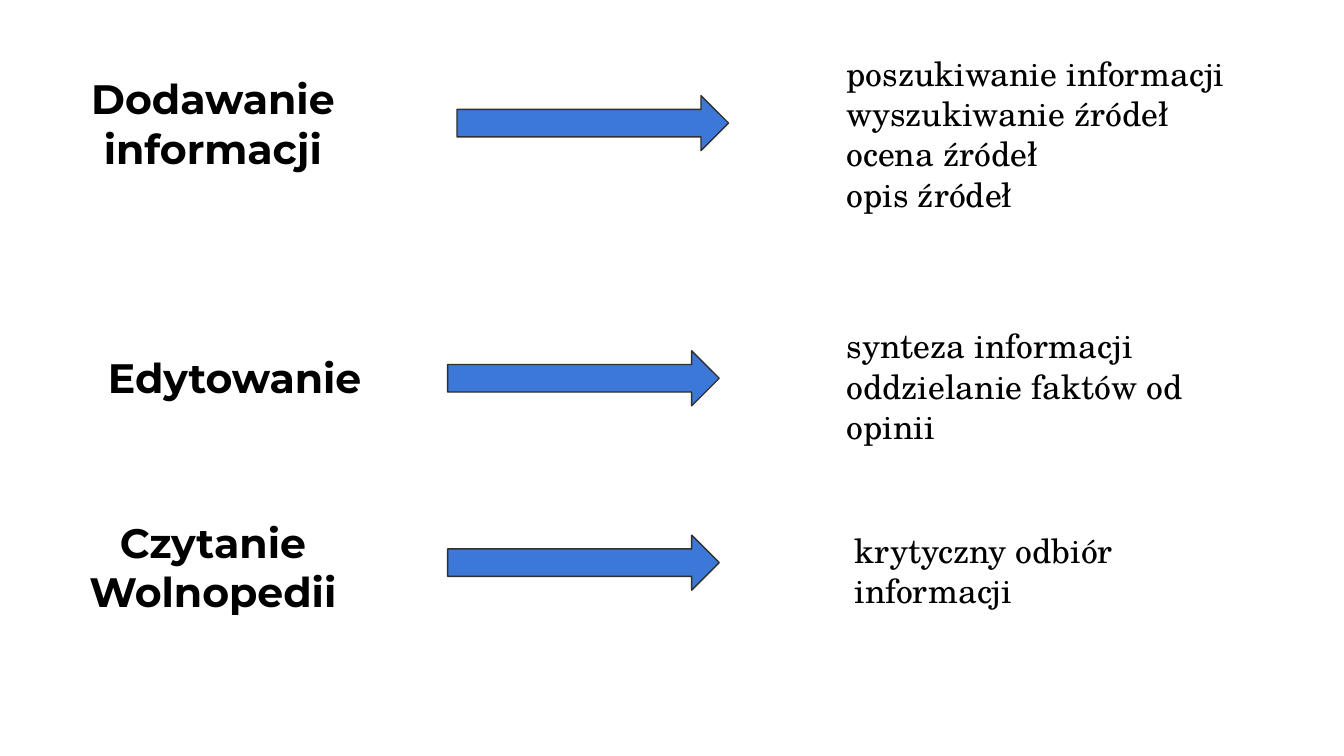
from pptx import Presentation
from pptx.dml.color import RGBColor
from pptx.enum.shapes import MSO_SHAPE
from pptx.enum.text import PP_ALIGN
from pptx.util import Pt

BLACK = RGBColor(0x00, 0x00, 0x00)
BLUE = RGBColor(0x3C, 0x78, 0xD8)
DARK_GREY = RGBColor(0x30, 0x30, 0x30)

ARROW_WIDTH, ARROW_HEIGHT = 145.5, 29.5

# Each row: activity and its box, arrow position, skills and their box
ROWS = [
    ("Dodawanie informacji", (10.8, 32.4, 206.6, 68.4), (244.8, 51.2),
     ["poszukiwanie informacji", "wyszukiwanie źródeł", "ocena źródeł", "opis źródeł"],
     (446.4, 21, 230.4, 100)),
    ("Edytowanie", (27.4, 181.6, 196.6, 63.4), (239.8, 187.9),
     ["synteza informacji", "oddzielanie faktów od opinii"],
     (446.4, 167, 196.6, 79)),
    ("Czytanie Wolnopedii", (10.8, 270, 206.6, 68.4), (239.8, 286.7),
     ["krytyczny odbiór informacji"],
     (450.7, 276.5, 193, 57.5)),
]

presentation = Presentation()
presentation.slide_width, presentation.slide_height = Pt(720), Pt(405)
slide = presentation.slides.add_slide(presentation.slide_layouts[6])


def add_text(box, lines, font_name, size, bold, alignment):
    frame = slide.shapes.add_textbox(*map(Pt, box)).text_frame
    frame.word_wrap = True
    frame.margin_left = frame.margin_right = Pt(7.2)
    frame.margin_top = frame.margin_bottom = Pt(7.2)
    for index, line in enumerate(lines):
        paragraph = frame.add_paragraph() if index else frame.paragraphs[0]
        paragraph.alignment = alignment
        run = paragraph.add_run()
        run.text = line
        run.font.name = font_name
        run.font.size = Pt(size)
        run.font.bold = bold
        run.font.color.rgb = BLACK


for activity, activity_box, (arrow_left, arrow_top), skills, skills_box in ROWS:
    # Activity on the left
    add_text(activity_box, [activity], "Montserrat", 22, True, PP_ALIGN.CENTER)

    # Arrow from the activity to its skills
    arrow = slide.shapes.add_shape(
        MSO_SHAPE.RIGHT_ARROW,
        Pt(arrow_left), Pt(arrow_top), Pt(ARROW_WIDTH), Pt(ARROW_HEIGHT))
    arrow.shadow.inherit = False
    arrow.fill.solid()
    arrow.fill.fore_color.rgb = BLUE
    arrow.line.color.rgb = DARK_GREY
    arrow.line.width = Pt(0.75)

    # Skills on the right
    add_text(skills_box, skills, "TeX Gyre Schola", 18, False, PP_ALIGN.LEFT)

presentation.save("out.pptx")
